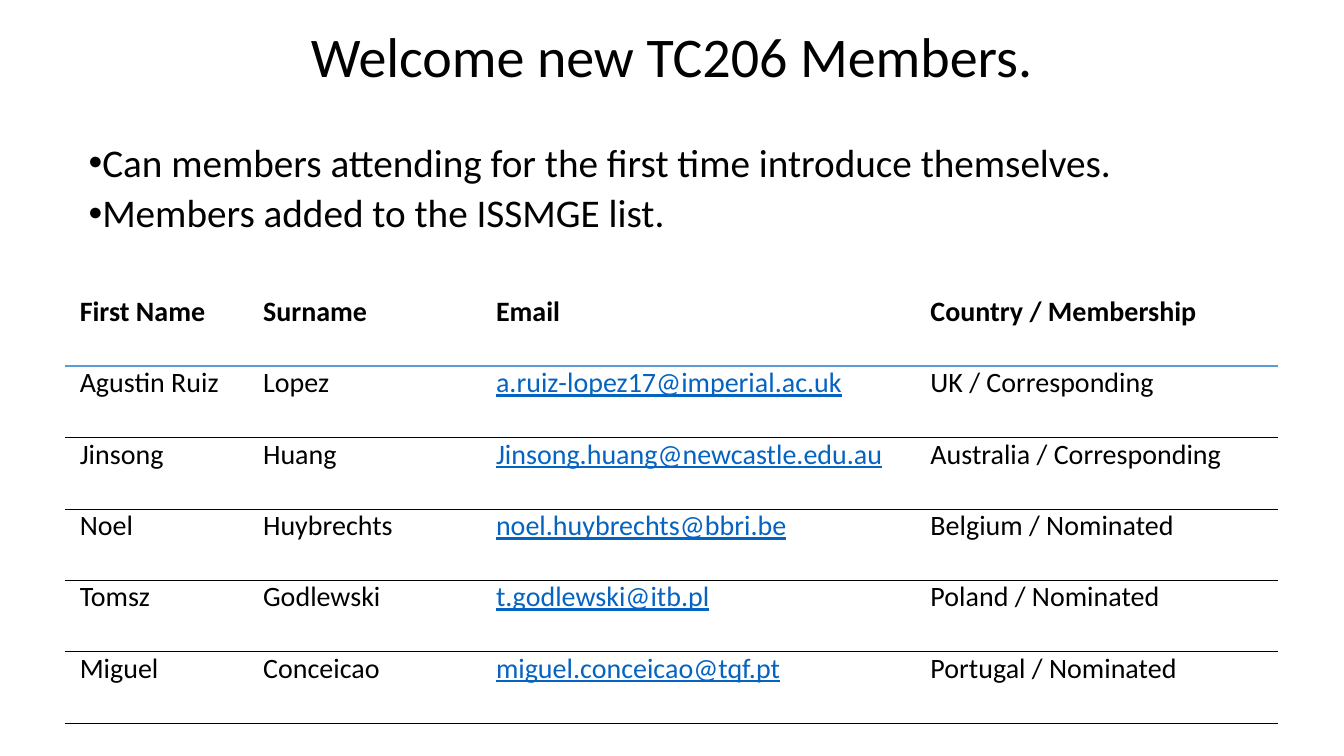
from lxml.etree import SubElement
from pptx import Presentation
from pptx.dml.color import RGBColor
from pptx.enum.text import MSO_ANCHOR, MSO_AUTO_SIZE, PP_ALIGN
from pptx.oxml.ns import qn
from pptx.util import Cm, Pt

# Content
TITLE = "Welcome new TC206 Members."
POINTS = [
    "Can members attending for the first time introduce themselves.",
    "Members added to the ISSMGE list.",
]
MEMBERS = [
    ("First Name", "Surname", "Email", "Country / Membership"),
    ("Agustin Ruiz", "Lopez", "a.ruiz-lopez17@imperial.ac.uk", "UK / Corresponding"),
    ("Jinsong", "Huang", "Jinsong.huang@newcastle.edu.au", "Australia / Corresponding"),
    ("Noel", "Huybrechts", "noel.huybrechts@bbri.be", "Belgium / Nominated"),
    ("Tomsz", "Godlewski", "t.godlewski@itb.pl", "Poland / Nominated"),
    ("Miguel", "Conceicao", "miguel.conceicao@tqf.pt", "Portugal / Nominated"),
]

# Style and layout
FONT = "Calibri"
BLACK, LINK_BLUE, RULE_BLUE = "000000", "0563C1", "5B9BD5"
HEADER_RULE, ROW_RULE = (RULE_BLUE, 1.5), (BLACK, 0.25)
COLUMN_WIDTHS = [4.62, 5.87, 10.95, 9.12]
ROW_HEIGHT = 1.8
EMAIL_COLUMN = 2


def format_runs(paragraph, size, color=BLACK, bold=False, underline=False):
    for run in paragraph.runs:
        run.font.name = FONT
        run.font.size = Pt(size)
        run.font.bold = bold
        run.font.underline = underline
        run.font.color.rgb = RGBColor.from_string(color)


def place(shape, left, top, width, height):
    shape.left, shape.top = Cm(left), Cm(top)
    shape.width, shape.height = Cm(width), Cm(height)
    shape.text_frame.word_wrap = True
    shape.text_frame.auto_size = MSO_AUTO_SIZE.NONE
    shape.text_frame.vertical_anchor = MSO_ANCHOR.MIDDLE


def set_borders(cell, top, bottom):
    """Draw the given (color, points) rules; a side with None stays bare."""
    properties = cell._tc.get_or_add_tcPr()
    sides = [("a:lnL", None), ("a:lnR", None), ("a:lnT", top), ("a:lnB", bottom)]
    for position, (tag, rule) in enumerate(sides):
        line = SubElement(properties, qn(tag))
        properties.insert(position, line)
        if rule is None:
            SubElement(line, qn("a:noFill"))
        else:
            color, points = rule
            line.set("w", str(Pt(points)))
            fill = SubElement(line, qn("a:solidFill"))
            SubElement(fill, qn("a:srgbClr")).set("val", color)


presentation = Presentation()
presentation.slide_width, presentation.slide_height = Cm(33.87), Cm(19.05)
slide = presentation.slides.add_slide(presentation.slide_layouts[1])

# Title
title = slide.shapes.title
place(title, 2.79, 0.48, 28.27, 2.03)
title.text_frame.text = TITLE
heading = title.text_frame.paragraphs[0]
heading.alignment = PP_ALIGN.CENTER
heading.line_spacing = 0.9
format_runs(heading, 40)

# Bullet list
body = slide.placeholders[1]
place(body, 1.98, 2.57, 28.27, 4.42)
body.text_frame.text = "\n".join(POINTS)
for paragraph in body.text_frame.paragraphs:
    paragraph.line_spacing = 0.9
    paragraph.space_before, paragraph.space_after = Pt(0), Pt(6)
    properties = paragraph._p.get_or_add_pPr()
    properties.set("marL", "0")
    properties.set("indent", str(-Cm(0.64)))
    SubElement(properties, qn("a:buFont")).set("typeface", "Arial")
    SubElement(properties, qn("a:buChar")).set("char", "•")
    format_runs(paragraph, 28)

# Member table
table = slide.shapes.add_table(
    len(MEMBERS), len(COLUMN_WIDTHS), Cm(1.65), Cm(7.42),
    Cm(sum(COLUMN_WIDTHS)), Cm(ROW_HEIGHT * len(MEMBERS)),
).table
table.first_row = table.horz_banding = False
for column, width in zip(table.columns, COLUMN_WIDTHS):
    column.width = Cm(width)
for row_index, member in enumerate(MEMBERS):
    table.rows[row_index].height = Cm(ROW_HEIGHT)
    is_header = row_index == 0
    rule_above = (None, HEADER_RULE)[row_index] if row_index < 2 else ROW_RULE
    rule_below = HEADER_RULE if is_header else ROW_RULE
    for column_index, text in enumerate(member):
        cell = table.cell(row_index, column_index)
        cell.text_frame.text = text
        cell.margin_left = cell.margin_right = Cm(0.36)
        cell.margin_top = cell.margin_bottom = 0
        cell.fill.background()
        set_borders(cell, rule_above, rule_below)
        is_email = column_index == EMAIL_COLUMN and not is_header
        format_runs(cell.text_frame.paragraphs[0], 20,
                    LINK_BLUE if is_email else BLACK, is_header, is_email)

presentation.save("out.pptx")
